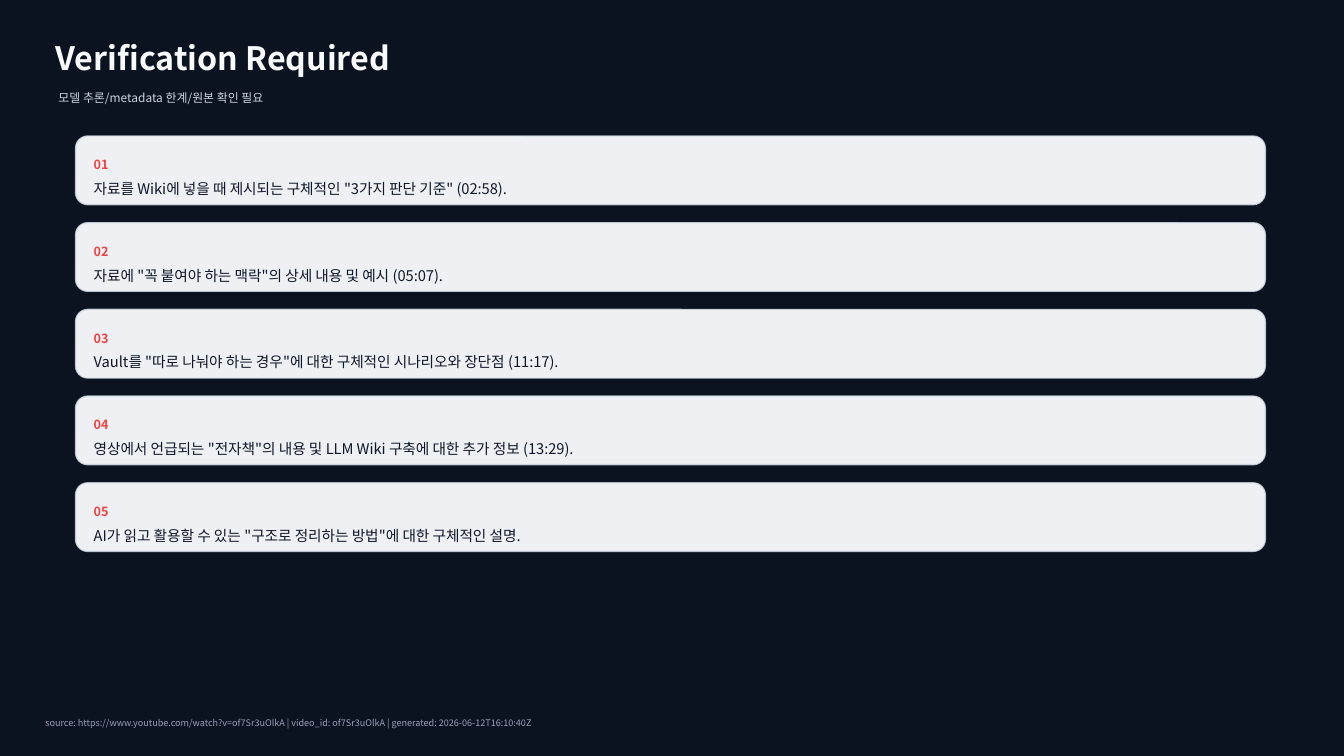
import dataclasses
import lxml.etree
import pptx
import pptx.dml.color
import pptx.enum.shapes
import pptx.enum.text
import pptx.oxml.ns
import pptx.util

Inches = pptx.util.Inches
qn = pptx.oxml.ns.qn


@dataclasses.dataclass(frozen=True)
class Theme:
    font: str = "Noto Sans CJK KR"
    back: str = "0B1220"
    card: str = "F8FAFC"
    edge: str = "D7E0EA"
    title: tuple = (23, "F8FAFC", True)
    lead: tuple = (8.5, "CBD5E1", False)
    num: tuple = (9, "EF4444", True)
    body: tuple = (10.5, "0F172A", False)
    foot: tuple = (6.5, "94A3B8", False)


def color(code):
    return pptx.dml.color.RGBColor.from_string(code)


class Deck:
    def __init__(self, show, theme):
        self.theme = theme
        self.slide = show.slides.add_slide(show.slide_layouts[5])
        fill = self.slide.background.fill
        fill.solid()
        fill.fore_color.rgb = color(theme.back)

    def label(self, shape, text, style):
        size, code, bold = style
        frame = shape.text_frame
        frame.word_wrap = True
        frame.auto_size = pptx.enum.text.MSO_AUTO_SIZE.NONE
        frame.vertical_anchor = pptx.enum.text.MSO_ANCHOR.MIDDLE
        frame.margin_left = frame.margin_right = 0
        frame.margin_top = frame.margin_bottom = 0
        para = frame.paragraphs[0]
        para.alignment = pptx.enum.text.PP_ALIGN.LEFT
        run = para.add_run()
        run.text = text
        font = run.font
        font.size = pptx.util.Pt(size)
        font.bold = bold
        font.color.rgb = color(code)
        font.name = self.theme.font
        props = run._r.get_or_add_rPr()
        lxml.etree.SubElement(props, qn("a:ea"), typeface=self.theme.font)

    def title(self, text, left, top, width, height):
        shape = self.slide.shapes.title
        shape.left, shape.top = Inches(left), Inches(top)
        shape.width, shape.height = Inches(width), Inches(height)
        self.label(shape, text, self.theme.title)

    def text(self, text, style, left, top, width, height):
        box = self.slide.shapes.add_textbox(
            Inches(left), Inches(top), Inches(width), Inches(height))
        self.label(box, text, style)

    def panel(self, left, top, width, height):
        shape = self.slide.shapes.add_shape(
            pptx.enum.shapes.MSO_SHAPE.ROUNDED_RECTANGLE,
            Inches(left), Inches(top), Inches(width), Inches(height))
        shape.adjustments[0] = 0.176
        shape.shadow.inherit = False
        shape.fill.solid()
        shape.fill.fore_color.rgb = color(self.theme.card)
        shape.line.color.rgb = color(self.theme.edge)
        shape.line.width = pptx.util.Pt(1)
        tints = shape._element.spPr.iter(qn("a:srgbClr"))
        for tint, alpha in zip(tints, (96, 80)):
            lxml.etree.SubElement(tint, qn("a:alpha"), val=str(alpha * 1000))

    def card(self, num, text, top):
        self.panel(0.75, top, 11.8, 0.68)
        self.text(f"{num:02}", self.theme.num, 0.93, top + 0.16, 11.44, 0.25)
        self.text(text, self.theme.body, 0.93, top + 0.5, 11.44, 0.04)


CHECKS = (
    '자료를 Wiki에 넣을 때 제시되는 구체적인 "3가지 판단 기준" (02:58).',
    '자료에 "꼭 붙여야 하는 맥락"의 상세 내용 및 예시 (05:07).',
    'Vault를 "따로 나눠야 하는 경우"에 대한 구체적인 시나리오와 장단점 (11:17).',
    '영상에서 언급되는 "전자책"의 내용 및 LLM Wiki 구축에 대한 추가 정보 (13:29).',
    'AI가 읽고 활용할 수 있는 "구조로 정리하는 방법"에 대한 구체적인 설명.',
)
SOURCE = ("source: https://www.youtube.com/watch?v=of7Sr3uOlkA | "
          "video_id: of7Sr3uOlkA | generated: 2026-06-12T16:10:40Z")


def main():
    show = pptx.Presentation()
    show.slide_width = Inches(13.33)
    show.slide_height = Inches(7.5)
    theme = Theme()
    deck = Deck(show, theme)
    deck.title("Verification Required", 0.55, 0.35, 12, 0.45)
    deck.text("모델 추론/metadata 한계/원본 확인 필요", theme.lead,
              0.58, 0.83, 11.5, 0.28)
    for row, check in enumerate(CHECKS):
        deck.card(row + 1, check, 1.35 + 0.86 * row)
    deck.text(SOURCE, theme.foot, 0.45, 7.05, 12.4, 0.25)
    show.save("out.pptx")


if __name__ == "__main__":
    main()
